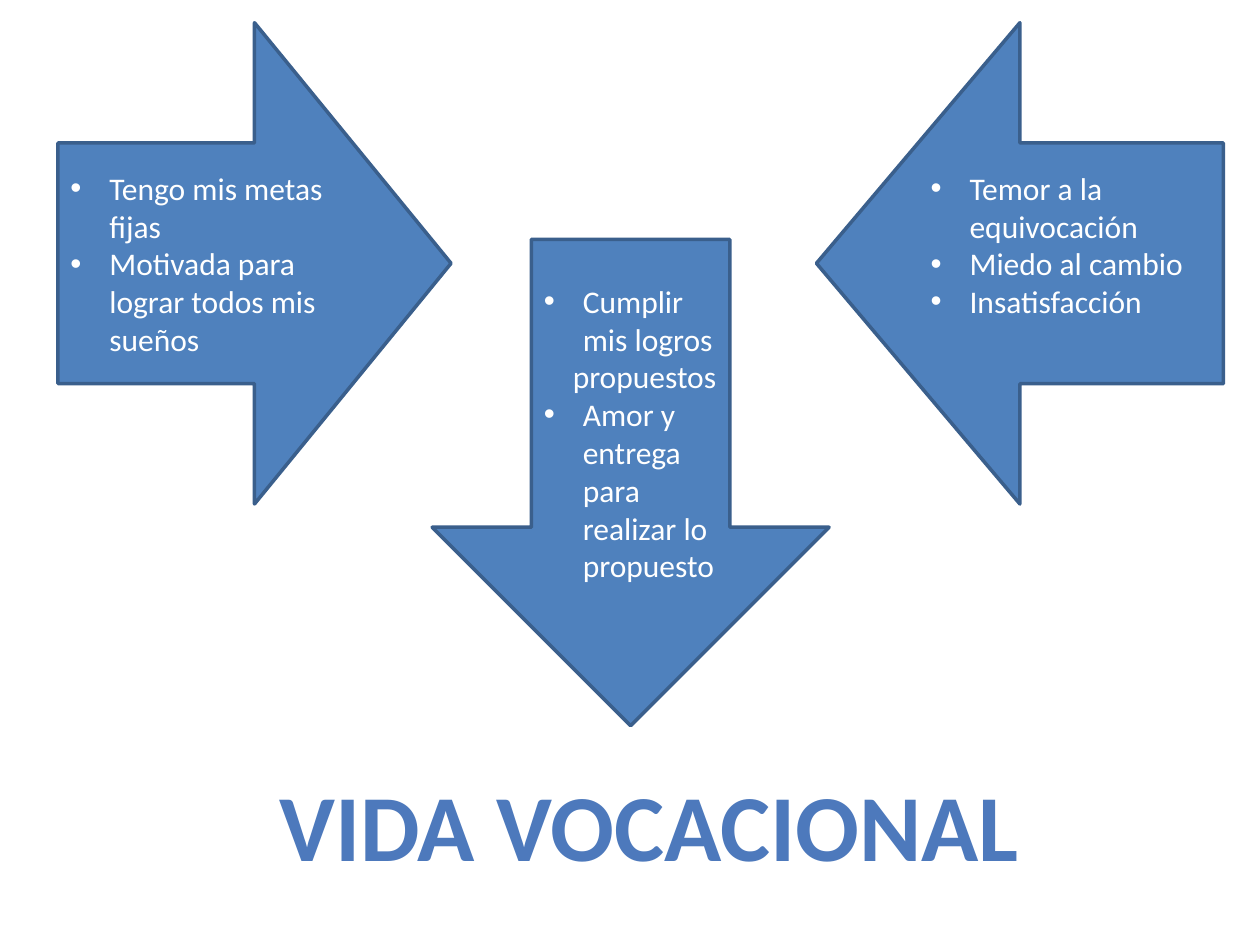
from lxml.etree import SubElement
from pptx import Presentation
from pptx.dml.color import RGBColor
from pptx.enum.shapes import MSO_SHAPE as SHAPE
from pptx.enum.text import MSO_ANCHOR as ANCHOR, PP_ALIGN as ALIGN
from pptx.oxml.ns import qn
from pptx.util import Inches, Pt

BLUE = RGBColor(0x4F, 0x81, 0xBD)
EDGE = RGBColor(0x3A, 0x5F, 0x8C)
TITLE = RGBColor(0x4D, 0x79, 0xBC)
WHITE = RGBColor(0xFF, 0xFF, 0xFF)
FONT = "Calibri"


def write(p, text, size=18, color=WHITE, bold=False, align=ALIGN.LEFT,
          bullet=True, indent=0.31):
    p.alignment = align
    pPr = p._p.get_or_add_pPr()
    pPr.set("marL", str(Inches(indent)))
    pPr.set("indent", str(Inches(-indent if bullet else 0)))
    if bullet:
        SubElement(pPr, qn("a:buFont"), typeface="Arial")
        SubElement(pPr, qn("a:buChar"), char="•")
    r = p.add_run()
    r.text = text
    r.font.name, r.font.size, r.font.bold = FONT, Pt(size), bold
    r.font.color.rgb = color


class Deck:
    """Hold the slide and draw its elements in one style."""

    def __init__(self, prs):
        self.s = prs.slides.add_slide(prs.slide_layouts[5])

    def title(self, text, x, y, w, h):
        sp = self.s.shapes.title
        sp.left, sp.top, sp.width, sp.height = map(Inches, (x, y, w, h))
        tf = sp.text_frame
        tf.word_wrap = False
        tf.vertical_anchor = ANCHOR.MIDDLE
        write(tf.paragraphs[0], text, size=54, color=TITLE, bold=True,
              align=ALIGN.CENTER, bullet=False, indent=0)

    def arrow(self, kind, x, y, w, h, items, bottom=0.05):
        sp = self.s.shapes.add_shape(kind, *map(Inches, (x, y, w, h)))
        sp.shadow.inherit = False
        sp.fill.solid()
        sp.fill.fore_color.rgb = BLUE
        sp.line.color.rgb = EDGE
        sp.line.width = Pt(2)
        tf = sp.text_frame
        tf.word_wrap = True
        tf.vertical_anchor = ANCHOR.MIDDLE
        tf.margin_bottom = Inches(bottom)
        for i, (text, fmt) in enumerate(items):
            p = tf.add_paragraph() if i else tf.paragraphs[0]
            write(p, text, **fmt)


def main():
    prs = Presentation()
    prs.slide_width, prs.slide_height = Inches(10), Inches(7.5)
    deck = Deck(prs)
    deck.title("VIDA VOCACIONAL", 2.09, 6.03, 6.13, 1.01)
    deck.arrow(SHAPE.RIGHT_ARROW, 0.46, 0.18, 3.12, 3.82, [
        ("Tengo mis metas fijas", {}),
        ("Motivada para lograr todos mis sueños", {}),
    ])
    deck.arrow(SHAPE.DOWN_ARROW, 3.43, 1.9, 3.15, 3.86, [
        ("Cumplir mis logros", {}),
        ("propuestos", {"bullet": False, "indent": 0.23}),
        ("Amor y entrega para realizar lo propuesto", {}),
    ])
    deck.arrow(SHAPE.LEFT_ARROW, 6.48, 0.18, 3.23, 3.82, [
        ("Temor a la equivocación", {}),
        ("Miedo al cambio", {}),
        ("Insatisfacción", {}),
    ], bottom=0.35)
    prs.save("out.pptx")


if __name__ == "__main__":
    main()
